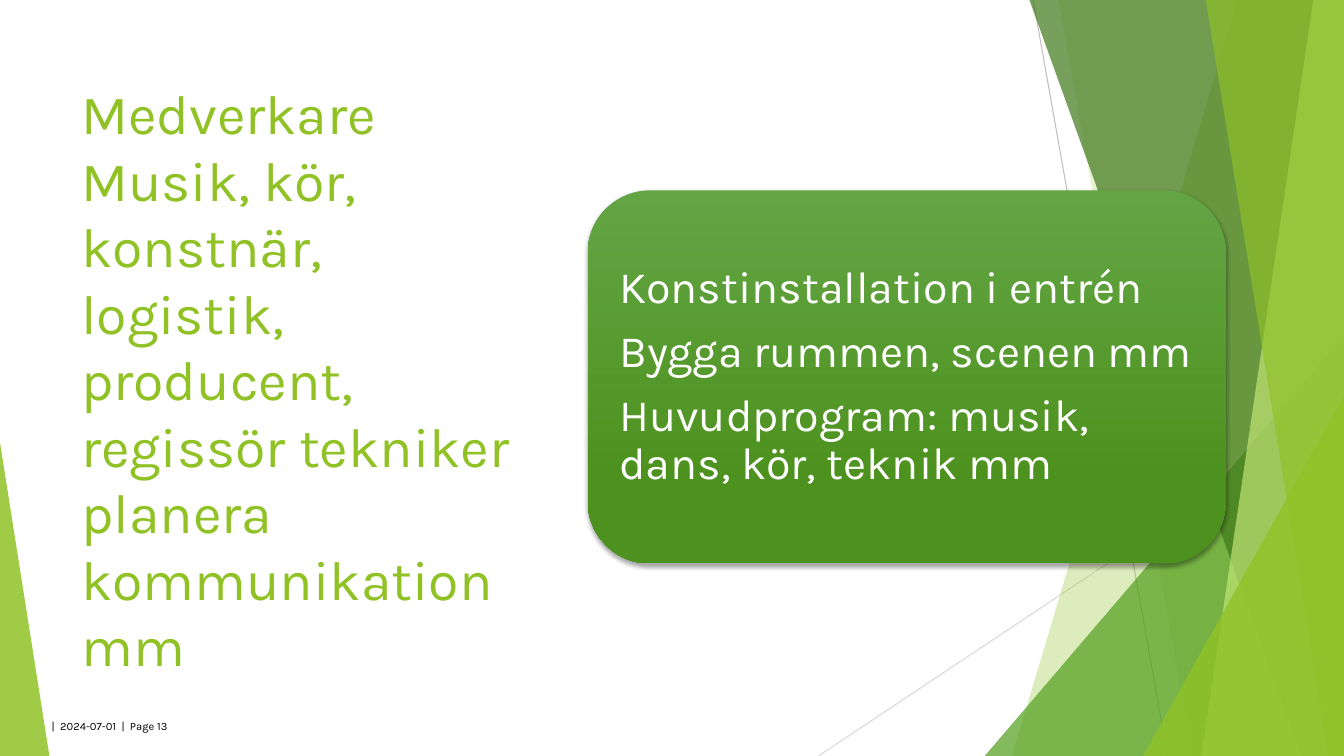
import pptx
import pptx.dml.color
import pptx.enum.shapes
import pptx.enum.text
import pptx.oxml
import pptx.oxml.ns
import pptx.util

Pt = pptx.util.Pt
RGB = pptx.dml.color.RGBColor
SHAPE = pptx.enum.shapes.MSO_SHAPE
MIDDLE = pptx.enum.text.MSO_ANCHOR.MIDDLE

WIDTH, HEIGHT = 960, 540
FONT = "Karla"
LIME = RGB(0x90, 0xC2, 0x26)
PALE_LIME = RGB(0xC0, 0xE4, 0x74)
GREEN = RGB(0x54, 0xA0, 0x21)
DARK_GREEN = RGB(0x3F, 0x78, 0x19)
CARD_TOP = RGB(0x63, 0xA5, 0x45)
CARD_BOTTOM = RGB(0x4D, 0x92, 0x1E)
GREY = RGB(0xBF, 0xBF, 0xBF)
LIGHT_GREY = RGB(0xD9, 0xD9, 0xD9)
BLACK = RGB(0, 0, 0)
WHITE = RGB(0xFF, 0xFF, 0xFF)


def paint(facet, color, opacity):
    """Fill with a translucent colour, without outline or shadow."""
    facet.shadow.inherit = False
    facet.line.fill.background()
    facet.fill.solid()
    facet.fill.fore_color.rgb = color
    srgb = facet._element.spPr.find(".//" + pptx.oxml.ns.qn("a:srgbClr"))
    srgb.append(pptx.oxml.parse_xml(
        f'<a:alpha {pptx.oxml.ns.nsdecls("a")} val="{opacity * 1000}"/>'))


def add_ray(slide, start, end, color):
    ray = slide.shapes.add_connector(
        pptx.enum.shapes.MSO_CONNECTOR.STRAIGHT, *map(Pt, start + end))
    ray.line.color.rgb = color
    ray.line.width = Pt(0.75)
    ray._element.spPr.append(pptx.oxml.parse_xml(
        f'<a:effectLst {pptx.oxml.ns.nsdecls("a")}/>'))


def add_band(slide, right, bottom, top_x, bottom_x, color, opacity):
    """A facet between a slanted edge and the right edge of the slide."""
    top = -0.72
    outline = slide.shapes.build_freeform(Pt(top_x), Pt(top))
    corners = [(right, top), (right, bottom), (bottom_x, bottom)]
    outline.add_line_segments([(Pt(x), Pt(y)) for x, y in corners], close=True)
    paint(outline.convert_to_shape(), color, opacity)


def add_wedge(slide, left, top, right, bottom, apex, color, opacity):
    wedge = slide.shapes.add_shape(
        SHAPE.ISOSCELES_TRIANGLE, Pt(left), Pt(top), Pt(right - left), Pt(bottom - top))
    wedge.adjustments[0] = apex
    paint(wedge, color, opacity)


def add_backdrop(slide, width, height):
    # Thin rays
    add_ray(slide, (738, 0), (834, height), GREY)
    add_ray(slide, (width, 290), (584.6, height), LIGHT_GREY)

    # Overlapping facets on the right, back to front
    add_band(slide, width, height, 884.2, 722.9, LIME, 30)
    add_band(slide, width, height, 756, 851.8, LIME, 20)
    add_wedge(slide, 703.4, 240, width, height, 1, GREEN, 72)
    for top_x, bottom_x, color, opacity in [
        (735.1, 929.5, DARK_GREEN, 70),
        (938.2, 858.2, PALE_LIME, 70),
        (861.1, 949, LIME, 65),
    ]:
        add_band(slide, width, height, top_x, bottom_x, color, opacity)
    add_wedge(slide, 816.5, 283, width, height, 1, LIME, 80)

    # Wedge in the lower left corner
    add_wedge(slide, 0, 316.1, 35.3, height, 0, LIME, 85)


def add_text(slide, box, paragraphs, size, color, inset=None, wrap=True):
    frame = slide.shapes.add_textbox(*map(Pt, box)).text_frame
    frame.word_wrap = wrap
    frame.vertical_anchor = MIDDLE
    if inset is not None:
        frame.margin_left = frame.margin_right = Pt(inset)
        frame.margin_top = frame.margin_bottom = Pt(inset)
    frame.text = "\n".join(paragraphs)
    for paragraph in frame.paragraphs:
        paragraph.font.name = FONT
        paragraph.font.size = Pt(size)
        paragraph.font.color.rgb = color
    return frame


def add_footer(slide, left, top, width, height):
    add_text(slide, (left, top, width, height), ["  |  2024-07-01  |  Page 13"],
             8, BLACK, inset=0, wrap=False)


def add_title(slide, left, top, width, height):
    lines = ("Medverkare\vMusik, kör, konstnär, logistik, producent, "
             "regissör tekniker planera \vkommunikation mm")
    add_text(slide, (left, top, width, height), [lines], 39.6, LIME)


def add_program_card(slide, left, top, width, height):
    # Rounded card with gradient and soft shadow
    card = slide.shapes.add_shape(
        SHAPE.ROUNDED_RECTANGLE, Pt(left), Pt(top), Pt(width), Pt(height))
    card.line.fill.background()
    card.fill.gradient()
    card.fill.gradient_angle = 270
    stops = [(0, CARD_TOP), (0.78, CARD_BOTTOM)]
    for stop, (position, color) in zip(card.fill.gradient_stops, stops):
        stop.position = position
        stop.color.rgb = color
    card.shadow.inherit = False
    effects = card._element.spPr.find(pptx.oxml.ns.qn("a:effectLst"))
    effects.append(pptx.oxml.parse_xml(
        f'<a:outerShdw {pptx.oxml.ns.nsdecls("a")} blurRad="{Pt(3)}" dist="{Pt(2)}" '
        'dir="5400000" rotWithShape="0"><a:srgbClr val="000000">'
        '<a:alpha val="35000"/></a:srgbClr></a:outerShdw>'))

    # Programme items
    pad = 13
    items = ["Konstinstallation i entrén", "Bygga rummen, scenen mm",
             "Huvudprogram: musik, dans, kör, teknik mm"]
    frame = add_text(
        slide, (left + pad, top + pad, width - 2 * pad, height - 2 * pad),
        items, 32, WHITE, inset=9.6)
    for paragraph in frame.paragraphs:
        paragraph.line_spacing = 0.9
        paragraph.space_after = Pt(11.2)


def main():
    deck = pptx.Presentation()
    deck.slide_width, deck.slide_height = Pt(WIDTH), Pt(HEIGHT)
    slide = deck.slides.add_slide(deck.slide_layouts[6])
    add_backdrop(slide, WIDTH, HEIGHT)
    add_footer(slide, 33.1, 514, 98, 9.4)
    add_title(slide, 51, 74, 335.5, 392.5)
    add_program_card(slide, 419.8, 136, 455.8, 266.5)
    deck.save("out.pptx")


if __name__ == "__main__":
    main()
